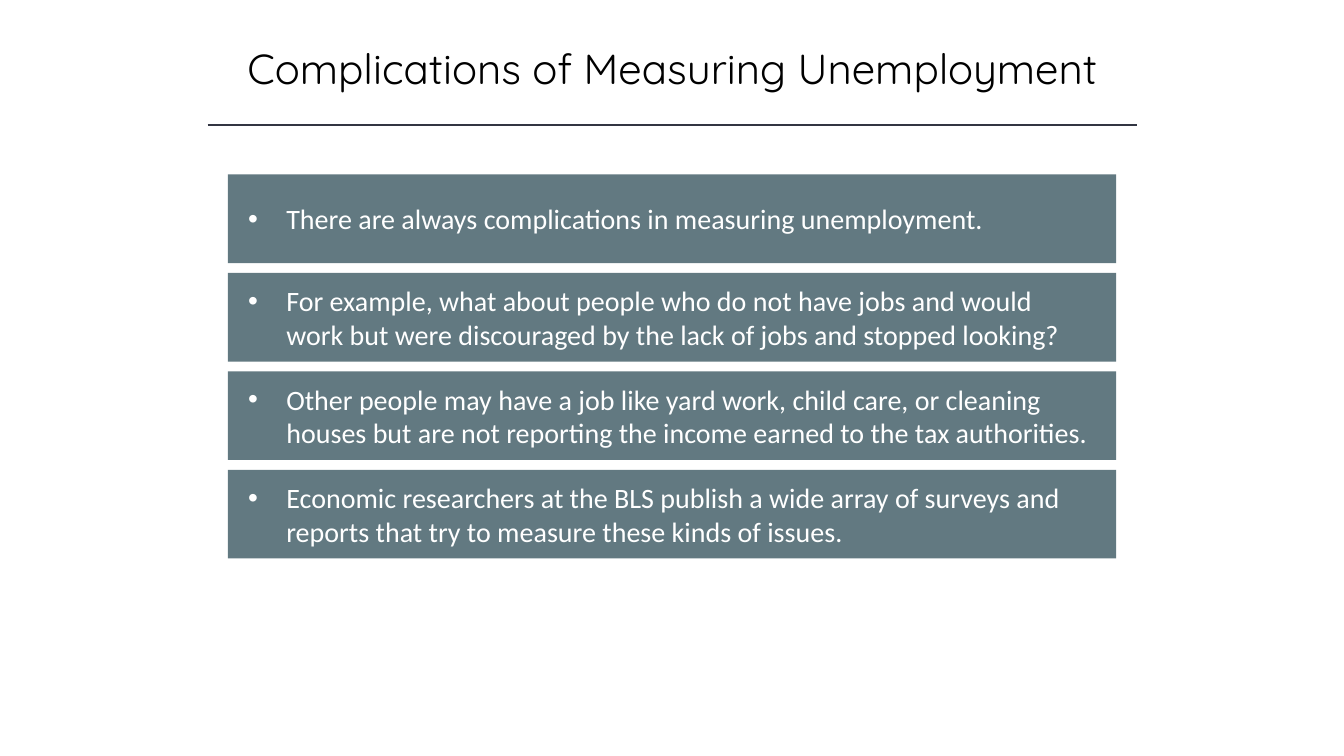
from dataclasses import dataclass

from lxml import etree
from pptx import Presentation
from pptx.dml.color import RGBColor
from pptx.enum import shapes, text
from pptx.oxml import ns
from pptx.util import Inches, Pt

TITLE = "Complications of Measuring Unemployment"
POINTS = [
    "There are always complications in measuring unemployment.",
    "For example, what about people who do not have jobs and would work "
    "but were discouraged by the lack of jobs and stopped looking?",
    "Other people may have a job like yard work, child care, or cleaning "
    "houses but are not reporting the income earned to the tax authorities.",
    "Economic researchers at the BLS publish a wide array of surveys and "
    "reports that try to measure these kinds of issues.",
]


@dataclass(frozen=True)
class Theme:
    ink: RGBColor = RGBColor(0x00, 0x00, 0x00)
    rule: RGBColor = RGBColor(0x32, 0x35, 0x42)
    bar: RGBColor = RGBColor(0x62, 0x79, 0x81)
    bar_text: RGBColor = RGBColor(0xFF, 0xFF, 0xFF)
    title_font: str = "Quicksand"
    body_font: str = "Calibri"
    title_size: int = 30
    body_size: int = 20


THEME = Theme()

SLIDE_WIDTH, SLIDE_HEIGHT = 13.33, 7.5
TITLE_BOX = (1.67, 0.37, 10, 0.61)
RULE_LEFT, RULE_RIGHT, RULE_TOP = 2.06, 11.28, 1.24
BAR_LEFT, BAR_TOP, BAR_WIDTH, BAR_HEIGHT = 2.26, 1.73, 8.81, 0.88
BAR_STEP = 0.977
BAR_INSETS = (0.2, 0.05, 0.27, 0.05)
BULLET_INDENT = 0.38


def write_text(shape, content, *, font, size, color, align,
               insets=(0.1, 0.05, 0.1, 0.05), anchor=text.MSO_ANCHOR.TOP,
               bullet=False):
    frame = shape.text_frame
    frame.word_wrap = True
    frame.vertical_anchor = anchor
    (frame.margin_left, frame.margin_top,
     frame.margin_right, frame.margin_bottom) = map(Inches, insets)
    paragraph = frame.paragraphs[0]
    paragraph.alignment = align
    run = paragraph.add_run()
    run.text = content
    run.font.name = font
    run.font.size = Pt(size)
    run.font.color.rgb = color
    if bullet:
        properties = paragraph._p.get_or_add_pPr()
        properties.set("marL", str(Inches(BULLET_INDENT)))
        properties.set("indent", str(-Inches(BULLET_INDENT)))
        etree.SubElement(properties, ns.qn("a:buFont")).set("typeface", "Arial")
        etree.SubElement(properties, ns.qn("a:buChar")).set("char", "•")


def add_title(slide):
    box = slide.shapes.add_textbox(*map(Inches, TITLE_BOX))
    write_text(box, TITLE, font=THEME.title_font, size=THEME.title_size,
               color=THEME.ink, align=text.PP_ALIGN.CENTER)


def add_rule(slide):
    line = slide.shapes.add_connector(
        shapes.MSO_CONNECTOR.STRAIGHT, Inches(RULE_LEFT), Inches(RULE_TOP),
        Inches(RULE_RIGHT), Inches(RULE_TOP))
    line.line.color.rgb = THEME.rule
    line.line.width = Pt(1)
    etree.SubElement(line._element.spPr, ns.qn("a:effectLst"))


def add_bar(slide, index, point):
    bar = slide.shapes.add_shape(
        shapes.MSO_SHAPE.RECTANGLE, Inches(BAR_LEFT),
        Inches(BAR_TOP + index * BAR_STEP), Inches(BAR_WIDTH),
        Inches(BAR_HEIGHT))
    bar.shadow.inherit = False
    bar.fill.solid()
    bar.fill.fore_color.rgb = THEME.bar
    bar.line.fill.background()
    write_text(bar, point, font=THEME.body_font, size=THEME.body_size,
               color=THEME.bar_text, align=text.PP_ALIGN.LEFT,
               insets=BAR_INSETS, anchor=text.MSO_ANCHOR.MIDDLE, bullet=True)


def main():
    presentation = Presentation()
    presentation.slide_width = Inches(SLIDE_WIDTH)
    presentation.slide_height = Inches(SLIDE_HEIGHT)
    slide = presentation.slides.add_slide(presentation.slide_layouts[6])
    add_title(slide)
    add_rule(slide)
    for index, point in enumerate(POINTS):
        add_bar(slide, index, point)
    presentation.save("out.pptx")


if __name__ == "__main__":
    main()
